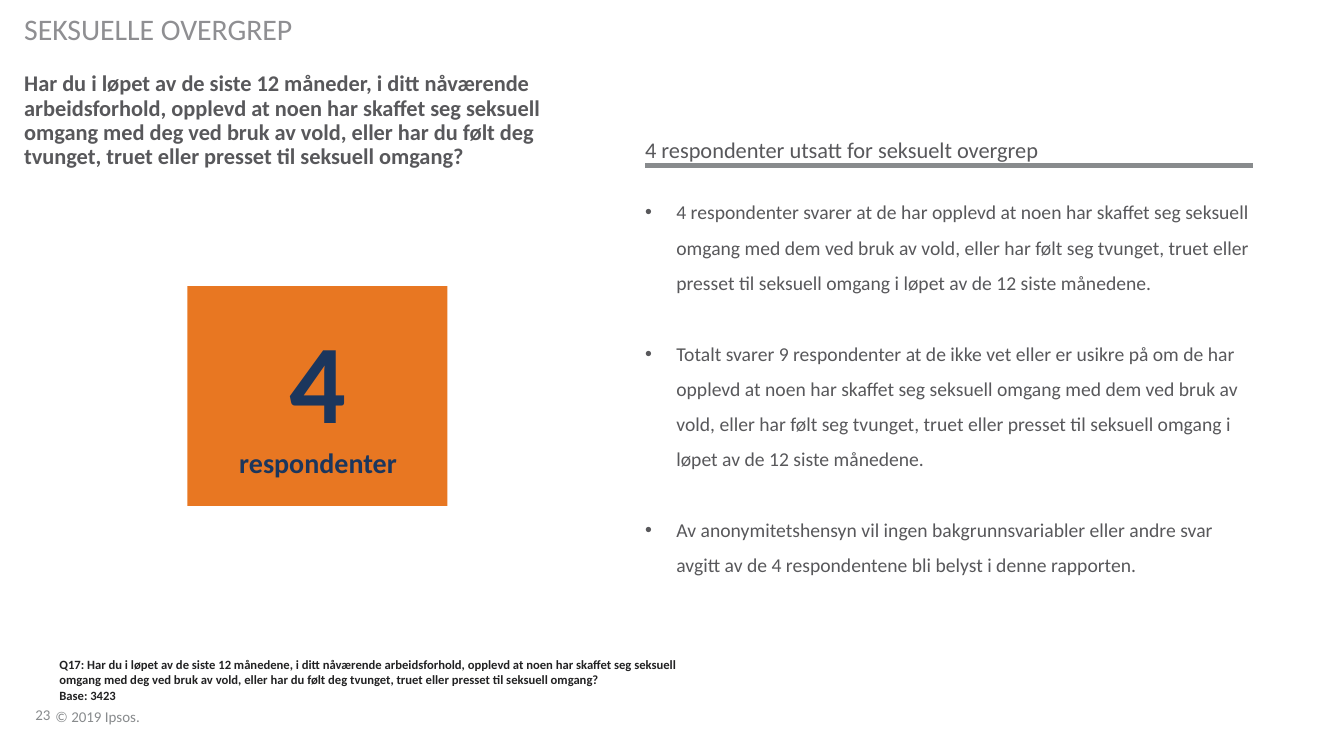
from dataclasses import dataclass
from typing import Any, Optional

from lxml import etree
from pptx import Presentation, util as u
from pptx.dml.color import RGBColor
from pptx.enum import shapes, text
from pptx.oxml.ns import qn

SLIDE_WIDTH, SLIDE_HEIGHT = u.Inches(13.33), u.Inches(7.5)
FONT = "Calibri"

ORANGE = RGBColor(0xE8, 0x77, 0x22)
NAVY = RGBColor(0x1B, 0x36, 0x5D)
INK = RGBColor(0x22, 0x22, 0x23)
BODY_GREY = RGBColor(0x58, 0x58, 0x5B)
SECTION_GREY = RGBColor(0x8F, 0x8F, 0x92)
RULE_GREY = RGBColor(0x88, 0x8B, 0x8D)

TOP, MIDDLE, BOTTOM = (text.MSO_ANCHOR.TOP, text.MSO_ANCHOR.MIDDLE,
                       text.MSO_ANCHOR.BOTTOM)
LEFT, CENTER = text.PP_ALIGN.LEFT, text.PP_ALIGN.CENTER

MARGIN, FINDINGS_LEFT = 1.8, 48  # left edges, percent of slide width
BULLET_INDENT = u.Inches(0.31)


@dataclass(frozen=True)
class Area:
    """A rectangle in percent of the slide's width and height."""
    left: float
    top: float
    width: float
    height: float

    def emu(self) -> tuple[int, int, int, int]:
        return (int(SLIDE_WIDTH * self.left / 100),
                int(SLIDE_HEIGHT * self.top / 100),
                int(SLIDE_WIDTH * self.width / 100),
                int(SLIDE_HEIGHT * self.height / 100))


@dataclass(frozen=True)
class TextBlock:
    area: Area
    paragraphs: tuple[str, ...]
    sizes: tuple[float, ...]  # one per paragraph; the last one repeats
    color: RGBColor
    bold: bool = False
    anchor: Any = TOP
    align: Any = LEFT
    line_spacing: float = 1.0
    gap: float = 0  # points between paragraphs
    inset: tuple[float, float] = (0, 0)  # inches, horizontal and vertical
    bullet: Optional[str] = None


SECTION = TextBlock(Area(MARGIN, 0.93, 73.58, 6.27), ("SEKSUELLE OVERGREP",),
                    (21.3,), SECTION_GREY, anchor=MIDDLE, line_spacing=0.9)
QUESTION = TextBlock(
    Area(MARGIN, 9.6, 44.03, 12.93),
    ("Har du i løpet av de siste 12 måneder, i ditt nåværende arbeidsforhold, "
     "opplevd at noen har skaffet seg seksuell omgang med deg ved bruk av vold, "
     "eller har du følt deg tvunget, truet eller presset til seksuell omgang?",),
    (16,), BODY_GREY, bold=True, line_spacing=0.9)
FINDINGS = TextBlock(
    Area(FINDINGS_LEFT, 24.93, 45.3, 57.6),
    ("4 respondenter svarer at de har opplevd at noen har skaffet seg seksuell "
     "omgang med dem ved bruk av vold, eller har følt seg tvunget, truet eller "
     "presset til seksuell omgang i løpet av de 12 siste månedene.",
     "Totalt svarer 9 respondenter at de ikke vet eller er usikre på om de har "
     "opplevd at noen har skaffet seg seksuell omgang med dem ved bruk av vold, "
     "eller har følt seg tvunget, truet eller presset til seksuell omgang i "
     "løpet av de 12 siste månedene.",
     "Av anonymitetshensyn vil ingen bakgrunnsvariabler eller andre svar avgitt "
     "av de 4 respondentene bli belyst i denne rapporten."),
    (14,), BODY_GREY, line_spacing=1.5, gap=25.3, bullet="•")
FINDINGS_HEADING = TextBlock(
    Area(FINDINGS_LEFT, 18, 45.23, 7.07),
    ("4 respondenter utsatt for seksuelt overgrep",), (16,), BODY_GREY)
FOOTNOTE = TextBlock(
    Area(3.68, 86.27, 50.03, 7.47),
    ("Q17: Har du i løpet av de siste 12 månedene, i ditt nåværende "
     "arbeidsforhold, opplevd at noen har skaffet seg seksuell omgang med deg "
     "ved bruk av vold, eller har du følt deg tvunget, truet eller presset til "
     "seksuell omgang?", "Base: 3423"),
    (9,), INK, bold=True, inset=(0.1, 0.05))
PAGE_NUMBER = TextBlock(Area(2.63, 91.07, 3.38, 4.67), ("23",), (10.7,),
                        RULE_GREY, anchor=BOTTOM, line_spacing=0.85)
COPYRIGHT = TextBlock(Area(4.13, 92.67, 7.58, 3.33), ("© 2019 Ipsos.",), (10.7,),
                      RULE_GREY, anchor=BOTTOM, line_spacing=0.85)
COUNT = TextBlock(Area(17.03, 41.2, 13.28, 22.4), ("4", "respondenter"),
                  (80, 20), NAVY, bold=True, align=CENTER)

COUNT_PANEL = Area(13.95, 37.87, 19.35, 29.07)
HEADING_RULE = Area(FINDINGS_LEFT, 21.87, 45.23, 0)


def set_all(target: Any, values: dict[str, Any]) -> None:
    for name, value in values.items():
        setattr(target, name, value)


def add_bullet(paragraph: Any, symbol: str) -> None:
    properties = paragraph._p.get_or_add_pPr()
    properties.set("marL", str(BULLET_INDENT))
    properties.set("indent", str(-BULLET_INDENT))
    etree.SubElement(properties, qn("a:buFont")).set("typeface", "Arial")
    etree.SubElement(properties, qn("a:buChar")).set("char", symbol)


def write_block(shape: Any, block: TextBlock) -> None:
    """Place a text box or placeholder and fill it with the block's text."""
    left, top, width, height = block.area.emu()
    set_all(shape, dict(left=left, top=top, width=width, height=height))
    across, down = (u.Inches(inset) for inset in block.inset)
    frame = shape.text_frame
    set_all(frame, dict(
        word_wrap=True, auto_size=text.MSO_AUTO_SIZE.NONE,
        vertical_anchor=block.anchor, margin_left=across, margin_right=across,
        margin_top=down, margin_bottom=down))
    for index, wording in enumerate(block.paragraphs):
        paragraph = frame.add_paragraph() if index else frame.paragraphs[0]
        set_all(paragraph, dict(
            alignment=block.align, line_spacing=block.line_spacing,
            space_before=u.Pt(block.gap if index else 0), space_after=u.Pt(0)))
        if block.bullet:
            add_bullet(paragraph, block.bullet)
        run = paragraph.add_run()
        run.text = wording
        size = block.sizes[min(index, len(block.sizes) - 1)]
        set_all(run.font, dict(name=FONT, size=u.Pt(size), bold=block.bold))
        run.font.color.rgb = block.color


def add_count_panel(slide: Any) -> None:
    panel = slide.shapes.add_shape(shapes.MSO_SHAPE.RECTANGLE, *COUNT_PANEL.emu())
    panel.shadow.inherit = False
    panel.fill.solid()
    panel.fill.fore_color.rgb = ORANGE
    panel.line.fill.background()


def add_heading_rule(slide: Any) -> None:
    left, top, width, _ = HEADING_RULE.emu()
    rule = slide.shapes.add_connector(
        shapes.MSO_CONNECTOR.STRAIGHT, left, top, left + width, top)
    rule.line.color.rgb = RULE_GREY
    rule.line.width = u.Pt(3.5)
    etree.SubElement(rule._element.spPr, qn("a:effectLst"))


def main() -> None:
    deck = Presentation()
    set_all(deck, dict(slide_width=SLIDE_WIDTH, slide_height=SLIDE_HEIGHT))
    slide = deck.slides.add_slide(deck.slide_layouts[1])  # title and content
    write_block(slide.shapes.title, QUESTION)
    write_block(slide.placeholders[1], FINDINGS)
    add_count_panel(slide)
    for block in (PAGE_NUMBER, COPYRIGHT, SECTION, FOOTNOTE, FINDINGS_HEADING, COUNT):
        write_block(slide.shapes.add_textbox(*block.area.emu()), block)
    add_heading_rule(slide)
    deck.save("out.pptx")


if __name__ == "__main__":
    main()
